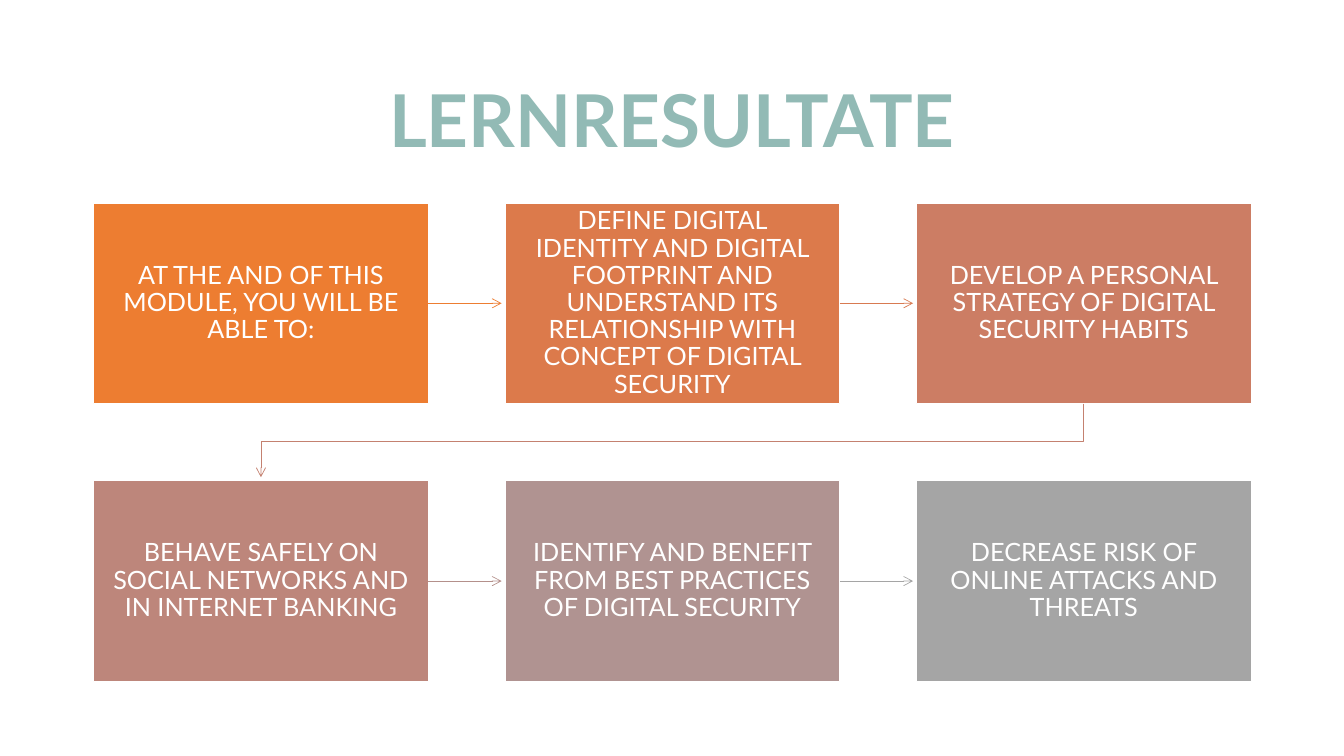
from lxml import etree
from pptx import Presentation
from pptx.dml.color import RGBColor
from pptx.enum.shapes import MSO_CONNECTOR, MSO_SHAPE
from pptx.enum.text import MSO_ANCHOR, PP_ALIGN
from pptx.oxml.ns import qn
from pptx.util import Pt

RECT = MSO_SHAPE.RECTANGLE
STRAIGHT = MSO_CONNECTOR.STRAIGHT
MIDDLE = MSO_ANCHOR.MIDDLE
CENTER = PP_ALIGN.CENTER
RIGHT_SIDE = 3

WHITE = RGBColor(0xFF, 0xFF, 0xFF)
TEAL = RGBColor(0x92, 0xBA, 0xB5)
ORANGE = RGBColor(0xED, 0x7D, 0x31)
GREY = RGBColor(0xA5, 0xA5, 0xA5)

TITLE = "LERNRESULTATE"
# text, box fill, colour of the arrow to the next step
STEPS = [
    ("AT THE AND OF THIS MODULE, YOU WILL BE ABLE TO:", ORANGE, ORANGE),
    ("DEFINE DIGITAL IDENTITY AND DIGITAL FOOTPRINT AND UNDERSTAND ITS "
     "RELATIONSHIP WITH CONCEPT OF DIGITAL SECURITY",
     RGBColor(0xDC, 0x7A, 0x4B), RGBColor(0xD8, 0x7A, 0x51)),
    ("DEVELOP A PERSONAL STRATEGY OF DIGITAL SECURITY HABITS",
     RGBColor(0xCC, 0x7D, 0x64), RGBColor(0xC4, 0x81, 0x70)),
    ("BEHAVE SAFELY ON SOCIAL NETWORKS AND IN INTERNET BANKING",
     RGBColor(0xBD, 0x86, 0x7B), RGBColor(0xB4, 0x90, 0x8B)),
    ("IDENTIFY AND BENEFIT FROM BEST PRACTICES OF DIGITAL SECURITY",
     RGBColor(0xB0, 0x93, 0x91), GREY),
    ("DECREASE RISK OF ONLINE ATTACKS AND THREATS", GREY, None),
]

COLS = 3
LEFT, TOP = 66.8, 144.9
WIDE, HIGH = 239.2, 143.5
STEP_X, STEP_Y = 293.9, 198.4
GAP = 2.4    # space between an arrowhead and the next box
DROP = 27    # from a box down to the bend of the long arrow


def write(shape, text, size, color, bold=False, after=6, inset=(7.2, 3.6)):
    frame = shape.text_frame
    frame.word_wrap = True
    frame.vertical_anchor = MIDDLE
    frame.margin_left = frame.margin_right = Pt(inset[0])
    frame.margin_top = frame.margin_bottom = Pt(inset[1])
    para = frame.paragraphs[0]
    para.alignment = CENTER
    para.line_spacing = 0.9
    para.space_after = Pt(after)
    run = para.add_run()
    run.text = text
    run.font.name = "Lato"
    run.font.size = Pt(size)
    run.font.bold = bold
    run.font.color.rgb = color


def style_arrow(arrow, color):
    arrow.line.color.rgb = color
    arrow.line.width = Pt(0.5)
    line = arrow.line._get_or_add_ln()
    etree.SubElement(line, qn("a:tailEnd"), type="arrow")
    etree.SubElement(arrow._element.spPr, qn("a:effectLst"))


def corner(index):
    row, col = divmod(index, COLS)
    return LEFT + col * STEP_X, TOP + row * STEP_Y


def add_box(shapes, index, text, fill):
    x, y = corner(index)
    box = shapes.add_shape(RECT, Pt(x), Pt(y), Pt(WIDE), Pt(HIGH))
    box.shadow.inherit = False
    box.fill.solid()
    box.fill.fore_color.rgb = fill
    box.line.color.rgb = WHITE
    box.line.width = Pt(1)
    write(box, text, 18, WHITE, after=6.3, inset=(11.7, 12.3))
    return box


def add_arrow(shapes, index, box, color):
    """Lead from a box to the next one, bending where a row ends."""
    x, y = corner(index)
    to_x, to_y = corner(index + 1)
    if y == to_y:
        mid = Pt(y + HIGH / 2)
        arrow = shapes.add_connector(
            STRAIGHT, Pt(x + WIDE), mid, Pt(to_x - GAP), mid)
        arrow.begin_connect(box, RIGHT_SIDE)
    else:
        start, end = Pt(x + WIDE / 2), Pt(to_x + WIDE / 2)
        base = y + HIGH
        path = shapes.build_freeform(start, Pt(base))
        path.add_line_segments(
            [(start, Pt(base + DROP)), (end, Pt(base + DROP)),
             (end, Pt(to_y - GAP))], close=False)
        arrow = path.convert_to_shape()
        arrow.fill.background()
    style_arrow(arrow, color)


def main():
    deck = Presentation()
    deck.slide_width, deck.slide_height = Pt(960), Pt(540)
    shapes = deck.slides.add_slide(deck.slide_layouts[6]).shapes
    title = shapes.add_textbox(Pt(66), Pt(44), Pt(828), Pt(89))
    write(title, TITLE, 52, TEAL, bold=True)
    for index, (text, fill, color) in enumerate(STEPS):
        box = add_box(shapes, index, text, fill)
        if color:
            add_arrow(shapes, index, box, color)
    deck.save("out.pptx")


if __name__ == "__main__":
    main()
